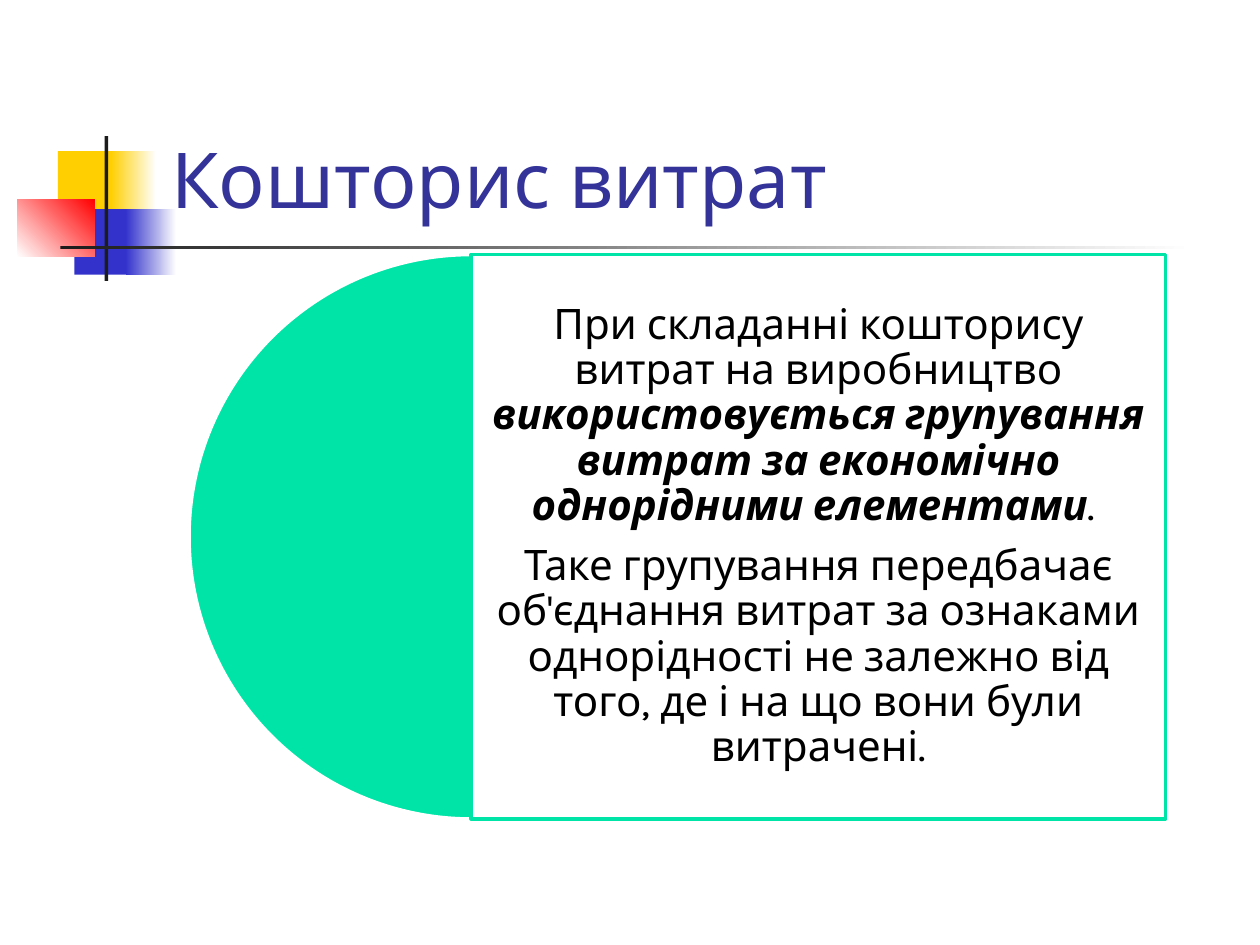
from lxml.etree import SubElement
from pptx import Presentation
from pptx.dml.color import RGBColor
from pptx.enum.shapes import MSO_SHAPE
from pptx.enum.text import MSO_ANCHOR, PP_ALIGN
from pptx.oxml.ns import qn
from pptx.util import Inches, Pt

WHITE = RGBColor(0xFF, 0xFF, 0xFF)
BLACK = RGBColor(0, 0, 0)
YELLOW = RGBColor(0xFF, 0xCF, 0x01)
BLUE = RGBColor(0x33, 0x33, 0xCC)
RED = RGBColor(0xFF, 0, 0)
DARK = RGBColor(0x1C, 0x1C, 0x1C)
NAVY = RGBColor(0x33, 0x33, 0x99)
GREEN = RGBColor(0, 0xE4, 0xA8)
FONT = "Karla"

deck = Presentation()
deck.slide_width, deck.slide_height = Inches(10), Inches(7.5)
slide = deck.slides.add_slide(deck.slide_layouts[6])


def add_shape(kind, box, start, end=None, angle=0, line=None):
    """Solid shape, or a gradient one when an end colour is given."""
    shape = slide.shapes.add_shape(kind, *map(Inches, box))
    shape.shadow.inherit = False
    if end is None:
        shape.fill.solid()
        shape.fill.fore_color.rgb = start
    else:
        shape.fill.gradient()
        shape.fill.gradient_angle = angle
        for stop, color in zip(shape.fill.gradient_stops, (start, end)):
            stop.color.rgb = color
    if line is None:
        shape.line.fill.background()
    else:
        shape.line.color.rgb = line
        shape.line.width = Pt(2)
    return shape


# Corner ornament and rule
for box, start, end, angle in [
    ((0.46, 1.2, 0.48, 0.52), YELLOW, None, 0),
    ((0.88, 1.2, 0.36, 0.52), YELLOW, WHITE, 0),
    ((0.59, 1.66, 0.46, 0.52), BLUE, None, 0),
    ((1, 1.66, 0.4, 0.52), BLUE, WHITE, 0),
    ((0.14, 1.58, 0.61, 0.46), WHITE, RED, 45),
    ((0.83, 1.08, 0.03, 1.15), DARK, None, 0),
    ((0.48, 1.95, 9, 0.03), DARK, WHITE, 0),
]:
    add_shape(MSO_SHAPE.RECTANGLE, box, start, end, angle)

# Title
title = slide.shapes.add_textbox(Inches(1.26), Inches(0.23), Inches(8.52), Inches(1.6))
frame = title.text_frame
frame.word_wrap = True
frame.vertical_anchor = MSO_ANCHOR.BOTTOM
para = frame.paragraphs[0]
para.text = "Кошторис витрат"
para.font.name, para.font.size = FONT, Pt(44)
para.font.color.rgb = NAVY

# Half disc and text panel
disc = add_shape(MSO_SHAPE.PIE, (1.5, 2.02, 4.48, 4.48), GREEN, line=WHITE)
disc.adjustments[0], disc.adjustments[1] = 54, 162  # 90 and 270 degrees

panel = add_shape(MSO_SHAPE.RECTANGLE, (3.74, 2.02, 5.51, 4.48), WHITE, line=GREEN)
tint = panel.fill._xPr.find(qn("a:solidFill"))[0]
SubElement(tint, qn("a:alpha"), val="90000")

frame = panel.text_frame
frame.word_wrap = True
frame.vertical_anchor = MSO_ANCHOR.MIDDLE
frame.margin_left = frame.margin_right = Inches(0.1)
frame.margin_top = frame.margin_bottom = Inches(0.1)

texts = [
    [("При складанні кошторису витрат на виробництво ", False),
     ("використовується групування витрат за економічно однорідними елементами", True),
     (". ", False)],
    [("Таке групування передбачає об'єднання витрат за ознаками однорідності "
      "не залежно від того, де і на що вони були витрачені.", False)],
]
for i, parts in enumerate(texts):
    para = frame.add_paragraph() if i else frame.paragraphs[0]
    para.alignment = PP_ALIGN.CENTER
    para.line_spacing = 0.9
    para.space_after = Pt(8.4)
    para.font.name, para.font.size = FONT, Pt(24)
    para.font.color.rgb = BLACK
    for text, strong in parts:
        run = para.add_run()
        run.text = text
        if strong:
            run.font.bold = run.font.italic = True

deck.save("out.pptx")
